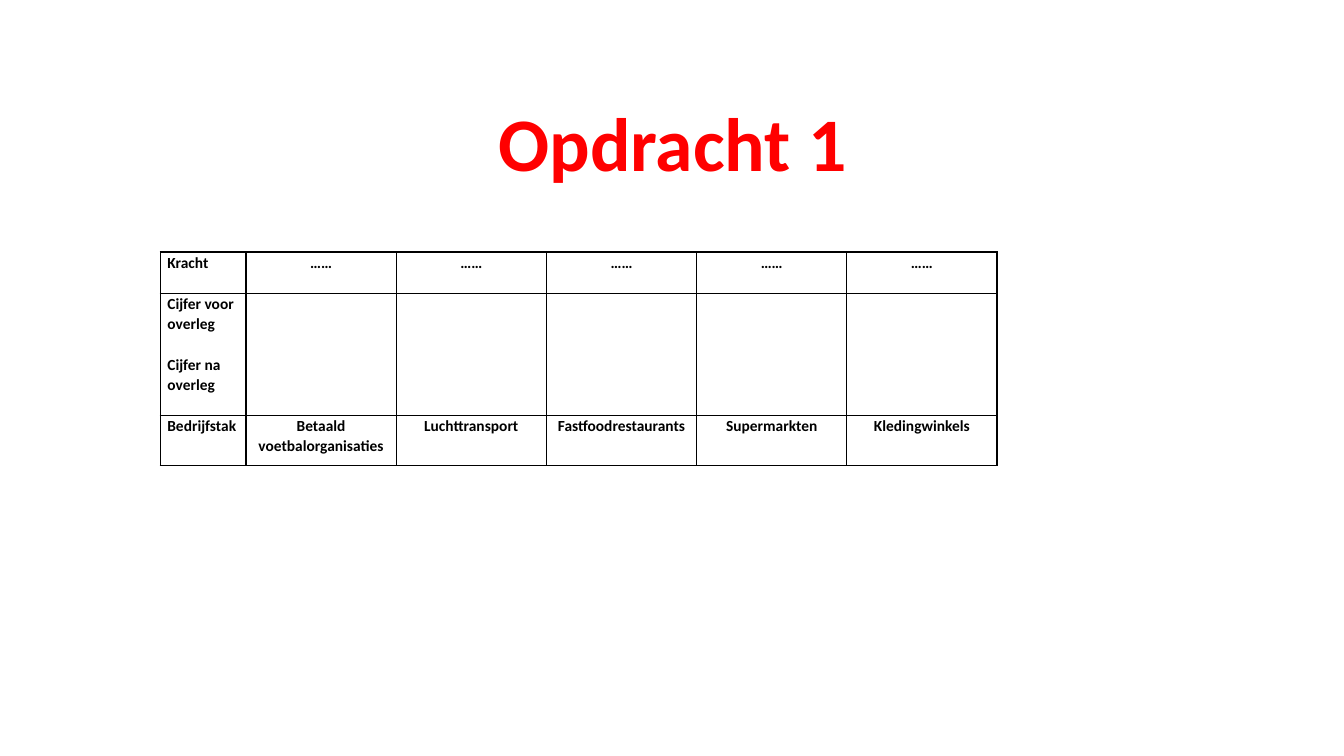
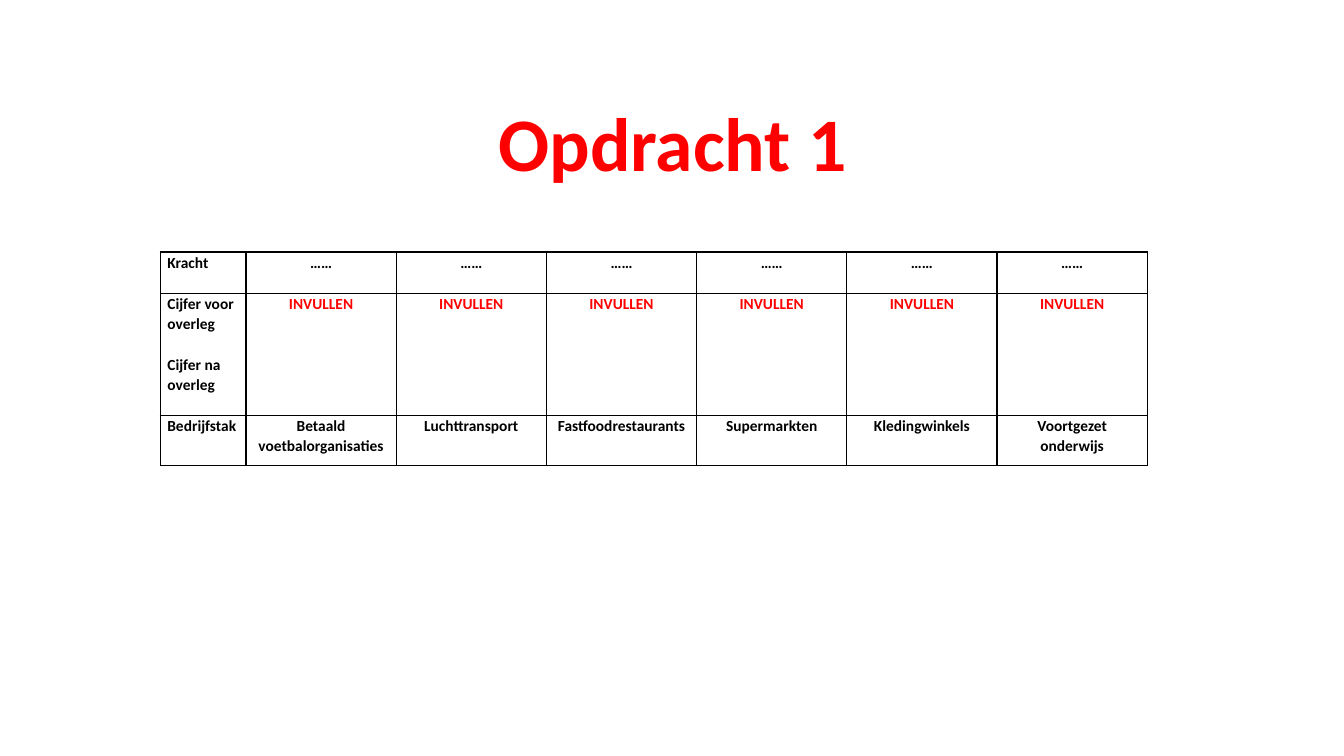
"""Build two slides with a fill-in table on forces per industry."""
from pptx import Presentation
from pptx.dml.color import RGBColor as Rgb
from pptx.enum.text import MSO_ANCHOR as Anchor, PP_ALIGN as Align
from pptx.oxml import parse_xml
from pptx.oxml.ns import nsdecls
from pptx.util import Inches, Pt

TITLE = "Opdracht 1"
LABELS = ["Kracht", "Cijfer voor overleg\nCijfer na overleg", "Bedrijfstak"]
SECTORS = ["Betaald voetbalorganisaties", "Luchttransport", "Fastfoodrestaurants",
           "Supermarkten", "Kledingwinkels", "Voortgezet\nonderwijs"]
SLIDES = [(SECTORS[:5], ""), (SECTORS, "INVULLEN")]

COLORS = {"accent": "FF0000", "text": "000000"}
HEAD = {"name": "Calibri", "size": Pt(54), "bold": True}
BODY = {"name": "Calibri", "size": Pt(11), "bold": True}
FRAME = {"margin_left": Inches(0.07), "margin_right": Inches(0.07),
         "margin_top": 0, "margin_bottom": 0}
HEIGHTS = [0.41, 1.21, 0.5]
FIRST, WIDTH = 0.85, 1.49
GAP = Pt(14.5)


def style(part, form):
    for key, value in form.items():
        setattr(part, key, value)


def write(frame, text, font, color, align, lead, gap=0):
    frame.text = text
    for i, para in enumerate(frame.paragraphs):
        style(para, {"alignment": align, "line_spacing": lead})
        if i and gap:
            para.space_before = gap
        for run in para.runs:
            style(run.font, font)
            run.font.color.rgb = Rgb.from_string(COLORS[color])


def border(cell):
    props = cell._tc.get_or_add_tcPr()
    for side in ("lnL", "lnR", "lnT", "lnB"):
        props.append(parse_xml(
            f'<a:{side} {nsdecls("a")} w="{Pt(1)}"><a:solidFill>'
            f'<a:srgbClr val="{COLORS["text"]}"/></a:solidFill></a:{side}>'))


def add_title(slide):
    box = slide.shapes.add_textbox(Inches(0.92), Inches(1.06), Inches(11.5), Inches(0.79))
    frame = box.text_frame
    style(frame, {"word_wrap": True, "vertical_anchor": Anchor.MIDDLE})
    write(frame, TITLE, HEAD, "accent", Align.CENTER, 0.9)


def add_grid(slide, sectors, grade):
    count = len(sectors)
    rows = [["……"] * count, [grade] * count, sectors]
    widths = [FIRST] + [WIDTH] * count
    table = slide.shapes.add_table(
        len(rows), len(widths), Inches(1.59), Inches(2.5),
        Inches(sum(widths)), Inches(sum(HEIGHTS))).table
    style(table, {"first_row": False, "horz_banding": False})
    for col, width in zip(table.columns, widths):
        col.width = Inches(width)
    for r, (label, values) in enumerate(zip(LABELS, rows)):
        table.rows[r].height = Inches(HEIGHTS[r])
        for c, text in enumerate([label] + values):
            cell = table.cell(r, c)
            style(cell, FRAME)
            border(cell)
            cell.fill.background()
            color = "accent" if r == 1 and c else "text"
            align = Align.CENTER if c else Align.LEFT
            write(cell.text_frame, text, BODY, color, align, 1.07, 0 if c else GAP)


def main():
    deck = Presentation()
    style(deck, {"slide_width": Inches(13.33), "slide_height": Inches(7.5)})
    for sectors, grade in SLIDES:
        slide = deck.slides.add_slide(deck.slide_layouts[6])
        add_title(slide)
        add_grid(slide, sectors, grade)
    deck.save("out.pptx")


if __name__ == "__main__":
    main()
